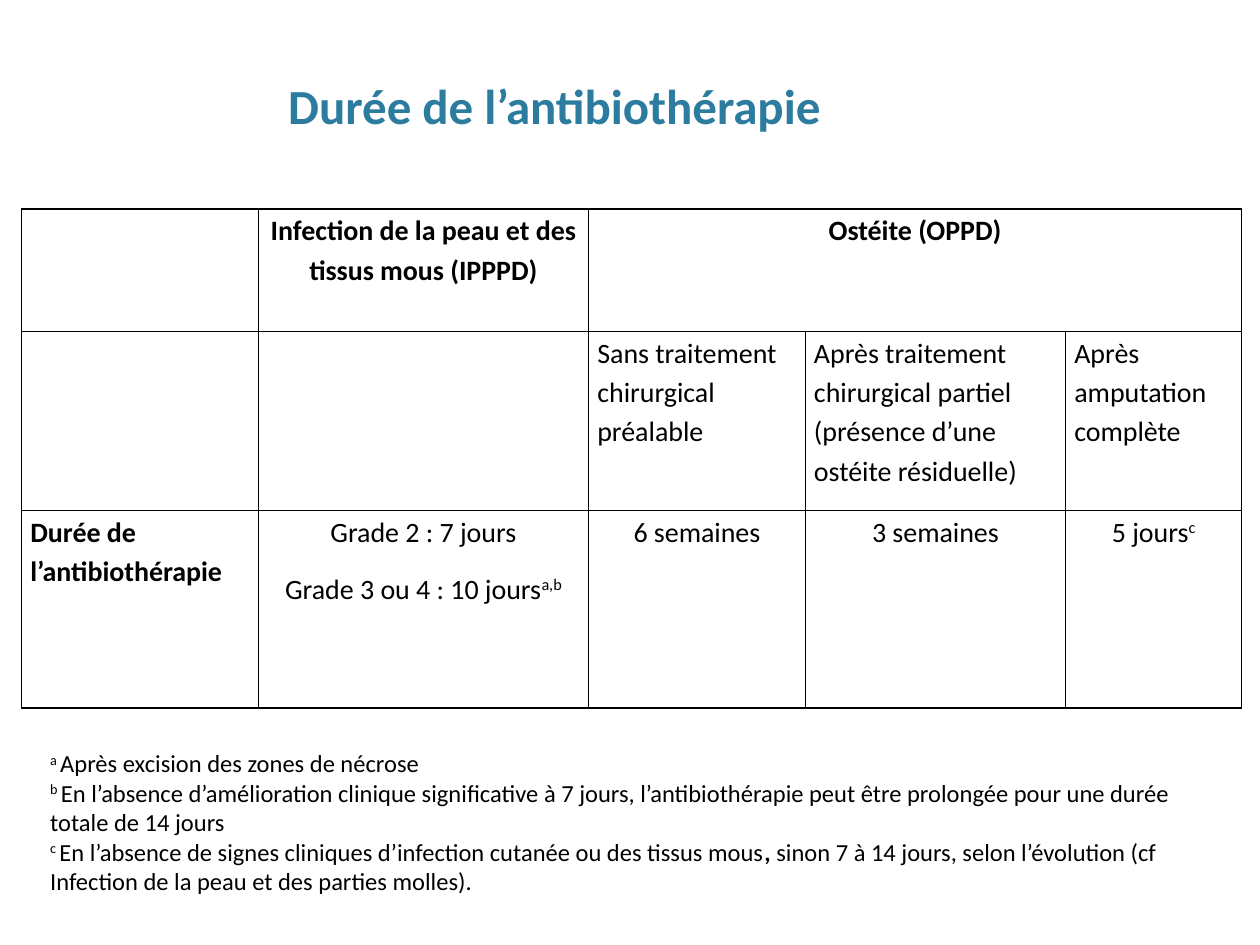
from lxml.etree import SubElement
from pptx import Presentation
from pptx.dml.color import RGBColor
from pptx.enum.text import MSO_ANCHOR, PP_ALIGN
from pptx.oxml.ns import qn
from pptx.util import Pt

TEAL = RGBColor(0x2C, 0x7C, 0x9F)
BLACK = RGBColor(0, 0, 0)
LEFT, CENTER = PP_ALIGN.LEFT, PP_ALIGN.CENTER

COLUMN_WIDTHS = [135.2, 188.8, 123.8, 148.8, 100.6]
ROW_HEIGHTS = [69.8, 102.4, 113]

# Each paragraph is a list of (text, style) runs; style is "", "bold" or "super".
# Cells: (row, column) -> (alignment, paragraphs)
CELLS = {
    (0, 1): (CENTER, [[("Infection de la peau et des tissus mous (IPPPD)", "bold")]]),
    (0, 2): (CENTER, [[("Ostéite (OPPD)", "bold")]]),
    (1, 2): (LEFT, [[("Sans traitement chirurgical préalable", "")]]),
    (1, 3): (LEFT, [[("Après traitement chirurgical partiel "
                      "(présence d’une ostéite résiduelle)", "")]]),
    (1, 4): (LEFT, [[("Après amputation complète", "")]]),
    (2, 0): (LEFT, [[("Durée de l’antibiothérapie", "bold")]]),
    (2, 1): (CENTER, [[("Grade 2 : 7 jours", "")],
                      [("Grade 3 ou 4 : 10 jours", ""), ("a,b", "super")]]),
    (2, 2): (CENTER, [[("6 semaines", "")]]),
    (2, 3): (CENTER, [[("3 semaines", "")]]),
    (2, 4): (CENTER, [[("5 jours", ""), ("c", "super")]]),
}

FOOTNOTES = [
    [("a ", "super"), ("Après excision des zones de nécrose", "")],
    [("b ", "super"), ("En l’absence d’amélioration clinique significative à 7 jours, "
                       "l’antibiothérapie peut être prolongée pour une durée totale "
                       "de 14 jours", "")],
    [("c ", "super"), ("En l’absence de signes cliniques d’infection cutanée ou des "
                       "tissus mous", ""),
     (", ", "bold"),
     ("sinon 7 à 14 jours, selon l’évolution (cf Infection de la peau et des "
      "parties molles).", "")],
]


class SlideBuilder:
    font_name = "Calibri"
    border_width = Pt(1)

    def __init__(self, slide):
        self.slide = slide

    def add_paragraphs(self, frame, paragraphs, size, color=BLACK, align=LEFT,
                       line_spacing=None, space_after=None):
        for index, runs in enumerate(paragraphs):
            para = frame.paragraphs[0] if index == 0 else frame.add_paragraph()
            para.alignment = align
            para.line_spacing = line_spacing
            para.space_after = space_after
            for text, style in runs:
                span = para.add_run()
                span.text = text
                span.font.name = self.font_name
                span.font.size = Pt(size)
                span.font.bold = style == "bold"
                span.font.color.rgb = color
                if style == "super":
                    span._r.get_or_add_rPr().set("baseline", "30000")

    def text(self, left, top, width, height, paragraphs, size,
             anchor=MSO_ANCHOR.TOP, **style):
        box = self.slide.shapes.add_textbox(Pt(left), Pt(top), Pt(width), Pt(height))
        box.text_frame.word_wrap = True
        box.text_frame.vertical_anchor = anchor
        self.add_paragraphs(box.text_frame, paragraphs, size, **style)

    def border(self, cell):
        """Draw the four edges of a cell; they must precede its fill."""
        properties = cell._tc.get_or_add_tcPr()
        for edge in ("a:lnL", "a:lnR", "a:lnT", "a:lnB"):
            line = SubElement(properties, qn(edge), w=str(int(self.border_width)))
            fill = SubElement(line, qn("a:solidFill"))
            SubElement(fill, qn("a:srgbClr"), val=str(BLACK))

    def table(self, left, top, widths, heights, contents, merges, size):
        table = self.slide.shapes.add_table(
            len(heights), len(widths), Pt(left), Pt(top),
            Pt(sum(widths)), Pt(sum(heights))).table
        table.first_row = table.horz_banding = False
        for column, width in zip(table.columns, widths):
            column.width = Pt(width)
        for row, height in zip(table.rows, heights):
            row.height = Pt(height)
        for cell in table.iter_cells():
            self.border(cell)
            cell.fill.background()
            cell.margin_left = cell.margin_right = Pt(5)
            cell.margin_top = cell.margin_bottom = 0
        for first, last in merges:
            table.cell(*first).merge(table.cell(*last))
        for position, (align, paragraphs) in contents.items():
            self.add_paragraphs(table.cell(*position).text_frame, paragraphs, size,
                                align=align, line_spacing=1.15, space_after=Pt(10))


def main():
    deck = Presentation()
    deck.slide_width, deck.slide_height = Pt(720), Pt(540)
    page = SlideBuilder(deck.slides.add_slide(deck.slide_layouts[6]))
    page.text(43.2, 30.2, 547.2, 50.4, [[("Durée de l’antibiothérapie", "bold")]], 28,
              anchor=MSO_ANCHOR.BOTTOM, color=TEAL, align=CENTER)
    page.table(12.4, 119.5, COLUMN_WIDTHS, ROW_HEIGHTS, CELLS,
               merges=[((0, 2), (0, 4))], size=16)
    page.text(21.6, 424.1, 679, 92.2, FOOTNOTES, 14)
    deck.save("out.pptx")


if __name__ == "__main__":
    main()
